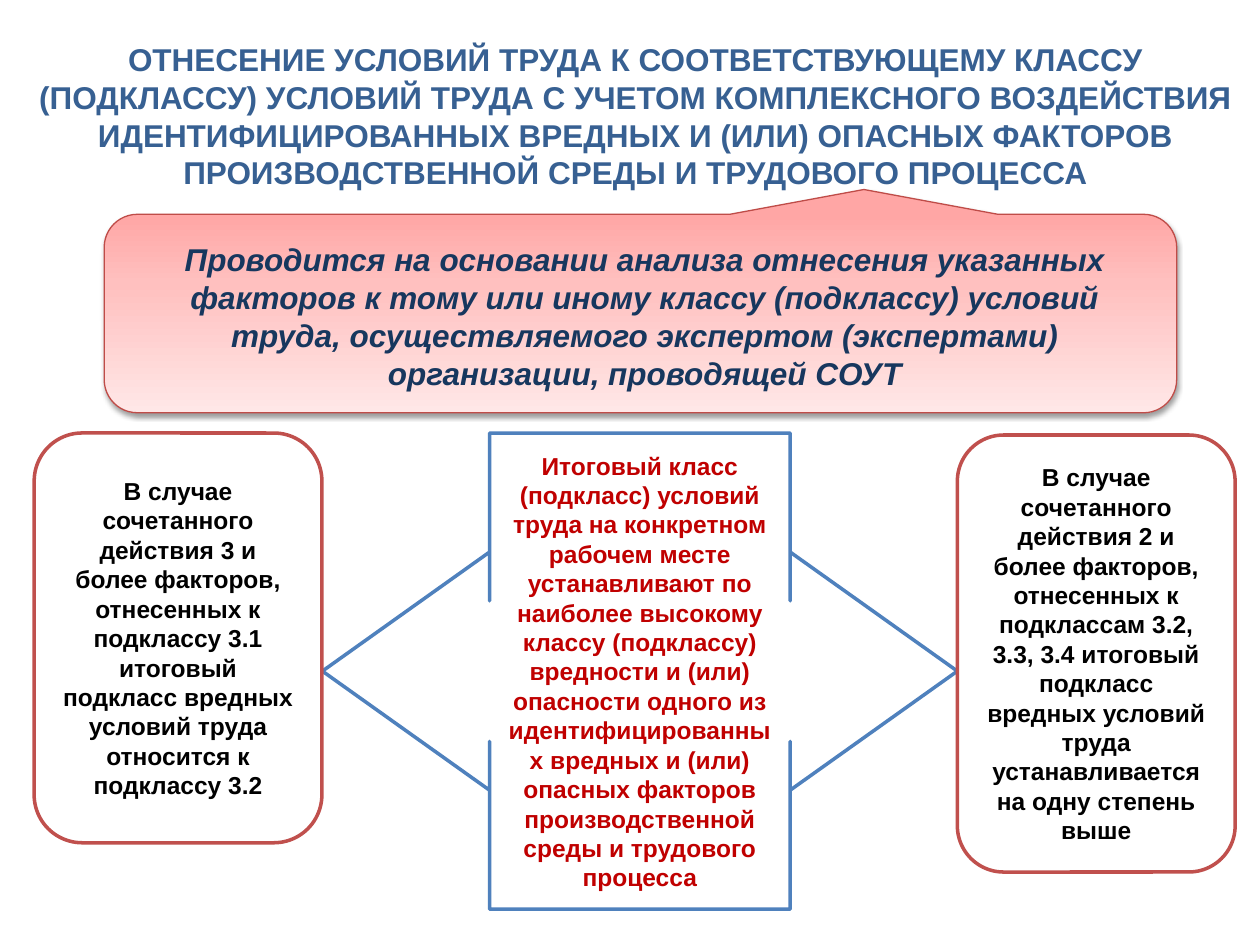
from copy import deepcopy
from dataclasses import dataclass

from lxml import etree
from pptx import Presentation
from pptx.dml.color import RGBColor
from pptx.enum.shapes import MSO_SHAPE
from pptx.enum.text import MSO_ANCHOR, MSO_AUTO_SIZE, PP_ALIGN
from pptx.oxml.ns import qn
from pptx.util import Cm, Pt


@dataclass(frozen=True)
class Theme:
    font: str = "Arial"
    title: str = "376092"
    statement: str = "17375E"
    result: str = "C00000"
    text: str = "000000"
    surface: str = "FFFFFF"
    blue: str = "4F81BD"
    red: str = "C0504D"
    callout_line: str = "BF4C48"
    callout_stops: tuple = ((0, "FFA6A5"), (0.35, "FFC0BF"), (1, "FFE7E7"))
    heading_size: float = 18
    body_size: float = 14


THEME = Theme()

TITLE = (
    "ОТНЕСЕНИЕ УСЛОВИЙ ТРУДА К СООТВЕТСТВУЮЩЕМУ КЛАССУ (ПОДКЛАССУ) "
    "УСЛОВИЙ ТРУДА С УЧЕТОМ КОМПЛЕКСНОГО ВОЗДЕЙСТВИЯ ИДЕНТИФИЦИРОВАННЫХ "
    "ВРЕДНЫХ И (ИЛИ) ОПАСНЫХ ФАКТОРОВ ПРОИЗВОДСТВЕННОЙ СРЕДЫ И ТРУДОВОГО ПРОЦЕССА"
)
STATEMENT = (
    "Проводится на основании анализа отнесения указанных факторов к тому или "
    "иному классу (подклассу) условий труда, осуществляемого экспертом "
    "(экспертами) организации, проводящей СОУТ"
)
RESULT = (
    "Итоговый класс (подкласс) условий труда на конкретном рабочем месте "
    "устанавливают по наиболее высокому классу (подклассу) вредности и (или) "
    "опасности одного из идентифицированных вредных и (или) опасных факторов "
    "производственной среды и трудового процесса"
)
CASES = (
    (
        (0.69, 8.73, 5.8, 8.26),
        "В случае сочетанного действия 3 и более факторов, отнесенных к "
        "подклассу 3.1 итоговый подкласс вредных условий труда относится к "
        "подклассу 3.2",
    ),
    (
        (19.3, 8.77, 5.6, 8.81),
        "В случае сочетанного действия 2 и более факторов, отнесенных к "
        "подклассам 3.2, 3.3, 3.4 итоговый подкласс вредных условий труда "
        "устанавливается на одну степень выше",
    ),
)


def apply_format(target, values):
    for name, value in values.items():
        setattr(target, name, value)


def position(box):
    return [Cm(length) for length in box]


def write_text(shape, text, color, size, italic=False, anchor=MSO_ANCHOR.MIDDLE):
    frame = shape.text_frame
    apply_format(frame, {
        "text": text,
        "word_wrap": True,
        "auto_size": MSO_AUTO_SIZE.NONE,
        "vertical_anchor": anchor,
    })
    paragraph = frame.paragraphs[0]
    paragraph.alignment = PP_ALIGN.CENTER
    font = paragraph.runs[0].font
    apply_format(font, {
        "name": THEME.font, "size": Pt(size), "bold": True, "italic": italic,
    })
    font.color.rgb = RGBColor.from_string(color)


def add_title(slide, box, text):
    title = slide.shapes.title
    apply_format(title, dict(zip(("left", "top", "width", "height"), position(box))))
    write_text(title, text, THEME.title, THEME.heading_size)


def add_outlined_shape(slide, kind, box, line_color, line_width):
    shape = slide.shapes.add_shape(kind, *position(box))
    shape.shadow.inherit = False
    shape.line.color.rgb = RGBColor.from_string(line_color)
    shape.line.width = Pt(line_width)
    return shape


def add_panel(slide, kind, box, line_color, text, text_color):
    shape = add_outlined_shape(slide, kind, box, line_color, 2)
    shape.fill.solid()
    shape.fill.fore_color.rgb = RGBColor.from_string(THEME.surface)
    write_text(shape, text, text_color, THEME.body_size)
    return shape


def set_gradient(shape, stops, angle):
    fill = shape.fill
    fill.gradient()
    fill.gradient_angle = angle
    stop_list = shape.element.spPr.find(qn("a:gradFill")).find(qn("a:gsLst"))
    while len(stop_list) < len(stops):
        stop_list.append(deepcopy(stop_list[0]))
    for item, (offset, color) in zip(stop_list, stops):
        item.set("pos", str(round(offset * 100000)))
    for stop, (offset, color) in zip(fill.gradient_stops, stops):
        stop.color.rgb = RGBColor.from_string(color)


def add_shadow(shape):
    effects = shape.element.spPr.find(qn("a:effectLst"))
    shadow = etree.SubElement(
        effects, qn("a:outerShdw"), blurRad=str(Pt(3.1)), dist=str(Pt(1.6)),
        dir="5400000", rotWithShape="0",
    )
    color = etree.SubElement(shadow, qn("a:srgbClr"), val="000000")
    etree.SubElement(color, qn("a:alpha"), val="38000")


def add_callout(slide, box):
    shape = add_outlined_shape(
        slide, MSO_SHAPE.ROUNDED_RECTANGULAR_CALLOUT, box, THEME.callout_line, 0.75
    )
    shape.rotation = 180
    set_gradient(shape, THEME.callout_stops, 90)
    add_shadow(shape)


def add_statement(slide, box, text):
    text_box = slide.shapes.add_textbox(*position(box))
    write_text(text_box, text, THEME.statement, THEME.heading_size,
               italic=True, anchor=MSO_ANCHOR.TOP)
    text_box.text_frame.auto_size = MSO_AUTO_SIZE.SHAPE_TO_FIT_TEXT


def add_result(slide, box, text):
    shape = add_panel(slide, MSO_SHAPE.LEFT_RIGHT_ARROW_CALLOUT, box,
                      THEME.blue, text, THEME.result)
    for index, value in enumerate((0.295, 0.25, 0.351, 0.481)):
        shape.adjustments[index] = value


def main():
    presentation = Presentation()
    apply_format(presentation, {"slide_width": Cm(25.4), "slide_height": Cm(19.05)})
    slide = presentation.slides.add_slide(presentation.slide_layouts[5])
    add_title(slide, (0.5, 0.53, 24.62, 3.6), TITLE)
    add_callout(slide, (2.1, 4.32, 21.62, 4))
    add_statement(slide, (3.1, 4.72, 19.8, 3.32), STATEMENT)
    add_result(slide, (6.5, 8.73, 12.8, 9.6), RESULT)
    for box, text in CASES:
        add_panel(slide, MSO_SHAPE.ROUNDED_RECTANGLE, box, THEME.red, text, THEME.text)
    presentation.save("out.pptx")


if __name__ == "__main__":
    main()
